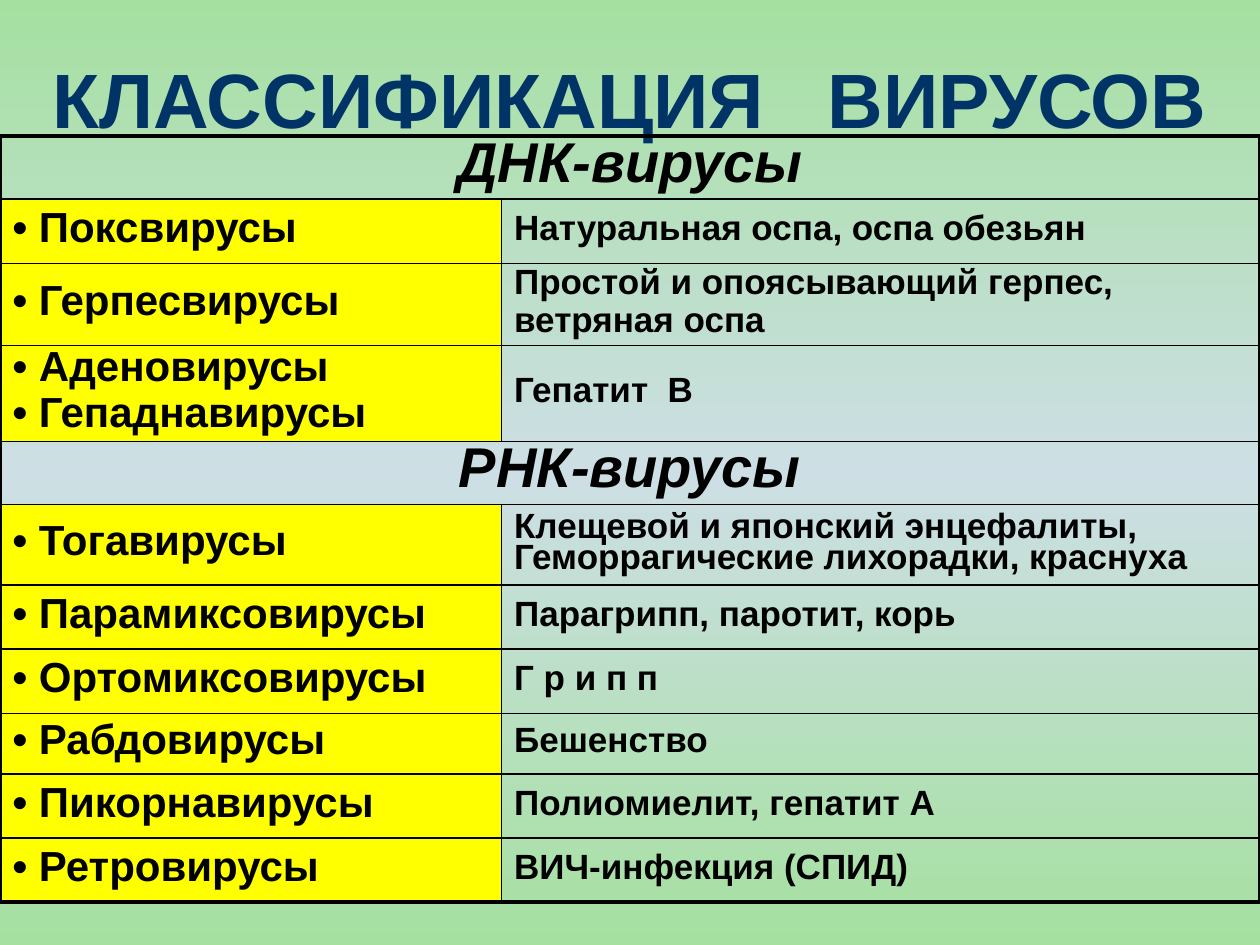
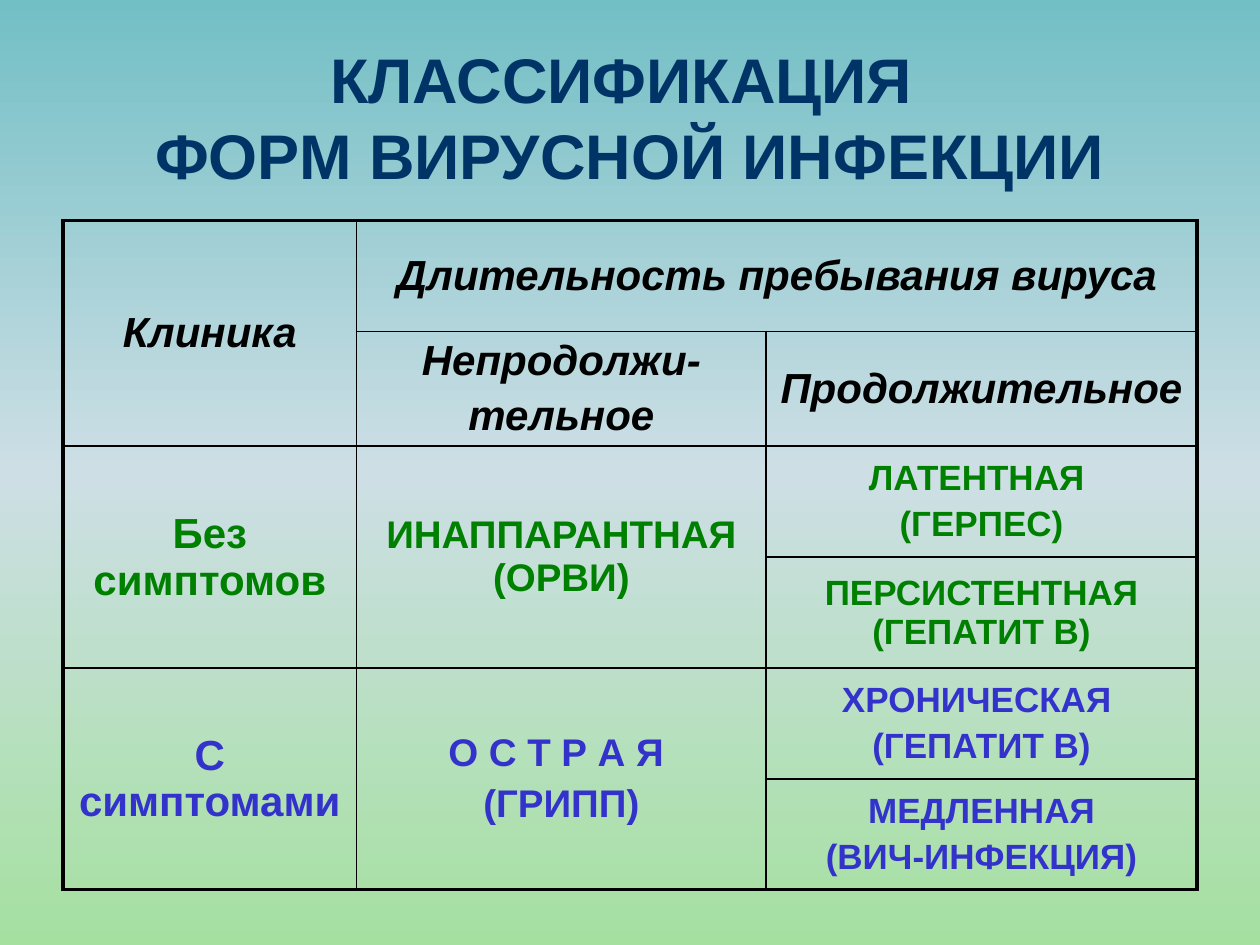
from copy import deepcopy
from dataclasses import dataclass

from lxml import etree
from pptx import Presentation
from pptx.dml.color import RGBColor
from pptx.enum.text import MSO_ANCHOR, MSO_AUTO_SIZE, PP_ALIGN
from pptx.oxml.ns import qn
from pptx.util import Pt

LEFT, CENTER = PP_ALIGN.LEFT, PP_ALIGN.CENTER
TOP, MIDDLE = MSO_ANCHOR.TOP, MSO_ANCHOR.MIDDLE
FIXED = MSO_AUTO_SIZE.NONE
TITLE_ONLY = 5


@dataclass(frozen=True)
class Theme:
    font: str = "Arial"
    navy: str = "003366"
    black: str = "000000"
    yellow: str = "FFFF00"
    green: str = "008000"
    blue: str = "3333CC"
    mint: str = "A5E0A0"
    mist: str = "CDDFE5"
    teal: str = "72BFC5"
    large: int = 44
    title: int = 36
    group: int = 32
    head: int = 24
    form: int = 22
    body: int = 20
    frame: float = 2.25
    rule: float = 1


def write(frame, text, size, color, font, align=LEFT, anchor=MIDDLE,
          bold=True, italic=False, line=None, before=None):
    """Fill a frame with one paragraph per item; before is a percentage."""
    frame.vertical_anchor = anchor
    for i, part in enumerate([text] if isinstance(text, str) else text):
        para = frame.add_paragraph() if i else frame.paragraphs[0]
        para.text = part
        para.alignment = align
        if line:
            para.line_spacing = line
        if before:
            para.space_before = Pt(0)
            space = para._p.pPr.find(qn("a:spcBef"))
            space.clear()
            etree.SubElement(space, qn("a:spcPct"), val=str(before * 1000))
        for run in para.runs:
            run.font.name, run.font.size = font, Pt(size)
            run.font.bold, run.font.italic = bold, italic
            run.font.color.rgb = RGBColor.from_string(color)


class Deck:
    def __init__(self, theme):
        self.theme = theme
        self.file = Presentation()
        self.file.slide_width, self.file.slide_height = Pt(720), Pt(540)
        self.slide = self.table = None

    def page(self, *colors):
        """Start a slide with a vertical gradient of evenly placed colours."""
        self.slide = self.file.slides.add_slide(
            self.file.slide_layouts[TITLE_ONLY])
        fill = self.slide.background.fill
        fill.gradient()
        fill.gradient_angle = 270
        stops = self.slide.element.find(".//" + qn("a:gsLst"))
        while len(stops) < len(colors):
            stops.append(deepcopy(stops[-1]))
        for i, (stop, color) in enumerate(zip(fill.gradient_stops, colors)):
            stop.position = i / (len(colors) - 1)
            stop.color.rgb = RGBColor.from_string(color)

    def title(self, text, box, size):
        shape = self.slide.shapes.title
        shape.left, shape.top, shape.width, shape.height = map(Pt, box)
        shape.text_frame.auto_size = FIXED
        write(shape.text_frame, text, size, self.theme.navy, self.theme.font,
              align=CENTER)

    def grid(self, box, widths, heights):
        shape = self.slide.shapes.add_table(
            len(heights), len(widths), *map(Pt, box))
        self.table = shape.table
        self.table.first_row = self.table.horz_banding = False
        for col, width in zip(self.table.columns, widths):
            col.width = Pt(width)
        for row, height in zip(self.table.rows, heights):
            row.height = Pt(height)
        shape.height = Pt(box[3])

    def edge(self, cell, side, width):
        line = etree.SubElement(cell._tc.get_or_add_tcPr(), qn("a:ln" + side),
                                w=str(Pt(width)))
        fill = etree.SubElement(line, qn("a:solidFill"))
        etree.SubElement(fill, qn("a:srgbClr"), val=self.theme.black)

    def cell(self, row, col, text, size, down=1, across=1, fill=None,
             color=None, **style):
        """Write a cell, merged over down rows and across columns."""
        last, end = row + down - 1, col + across - 1
        rows, cols = len(self.table.rows), len(self.table.columns)
        first = self.table.cell(row, col)
        if down * across > 1:
            first.merge(self.table.cell(last, end))
        outer = {"L": col == 0, "R": end == cols - 1,
                 "T": row == 0, "B": last == rows - 1}
        for r in range(row, last + 1):
            for c in range(col, end + 1):
                part = self.table.cell(r, c)
                meets = {"L": c == col, "R": c == end,
                         "T": r == row, "B": r == last}
                for side, rim in outer.items():
                    if meets[side] or (r, c) == (row, col):
                        self.edge(part, side,
                                  self.theme.frame if rim else self.theme.rule)
                if fill:
                    part.fill.solid()
                    part.fill.fore_color.rgb = RGBColor.from_string(fill)
                else:
                    part.fill.background()
        write(first.text_frame, text, size, color or self.theme.black,
              self.theme.font, before=20, **style)
        first.vertical_anchor = style.get("anchor", MIDDLE)


VIRUSES = [
    ("ДНК-вирусы", [
        (["Поксвирусы"], "Натуральная оспа, оспа обезьян"),
        (["Герпесвирусы"],
         ["Простой и опоясывающий герпес,", "ветряная оспа"]),
        (["Аденовирусы", "Гепаднавирусы"], "Гепатит  В"),
    ]),
    ("РНК-вирусы", [
        (["Тогавирусы"], "Клещевой и японский энцефалиты, "
                         "Геморрагические лихорадки, краснуха"),
        (["Парамиксовирусы"], "Парагрипп, паротит, корь"),
        (["Ортомиксовирусы"], "Г р и п п"),
        (["Рабдовирусы"], "Бешенство"),
        (["Пикорнавирусы"], "Полиомиелит, гепатит А"),
        (["Ретровирусы"], "ВИЧ-инфекция (СПИД)"),
    ]),
]


def viruses(deck):
    look = deck.theme
    deck.page(look.mint, look.mist, look.mint)
    deck.title("КЛАССИФИКАЦИЯ   ВИРУСОВ", (0, 21.6, 720, 68.4), look.large)
    deck.grid((0, 77.8, 720, 449.3), (286.6, 433.4),
              (30.2, 36.7, 45.4, 50.4, 35.3, 46.1, 36.7, 36.7, 34.6, 36.7,
               36.7))
    row = 0
    for group, kinds in VIRUSES:
        deck.cell(row, 0, group, look.group, across=2, align=CENTER,
                  anchor=MIDDLE if row else TOP, italic=True, line=0.8)
        for row, (names, ills) in enumerate(kinds, row + 1):
            deck.cell(row, 0, [f"• {name}" for name in names], look.head,
                      fill=look.yellow, line=0.8)
            deck.cell(row, 1, ills, look.body, line=0.8)
        row += 1


def forms(deck):
    look = deck.theme
    deck.page(look.teal, look.mist, look.mint)
    deck.title("КЛАССИФИКАЦИЯ \vФОРМ ВИРУСНОЙ ИНФЕКЦИИ",
               (36, 21.6, 648, 90), look.title)
    deck.grid((36, 126, 648, 385.9), (167.8, 234, 246.2), [63.4] * 6)
    heads = [
        (0, 0, "Клиника", 2, 1),
        (0, 1, "Длительность пребывания вируса", 1, 2),
        (1, 1, ["Непродолжи-", "тельное"], 1, 1),
        (1, 2, "Продолжительное", 1, 1),
    ]
    for row, col, text, down, across in heads:
        deck.cell(row, col, text, look.head, down, across, align=CENTER,
                  italic=True)
    groups = [
        (look.green, "Без симптомов", "ИНАППАРАНТНАЯ (ОРВИ)",
         ["ЛАТЕНТНАЯ ", "(ГЕРПЕС)"], "ПЕРСИСТЕНТНАЯ (ГЕПАТИТ В)"),
        (look.blue, "С симптомами", ["О С Т Р А Я ", "(ГРИПП)"],
         ["ХРОНИЧЕСКАЯ ", "(ГЕПАТИТ В)"], ["МЕДЛЕННАЯ", "(ВИЧ-ИНФЕКЦИЯ)"]),
    ]
    for i, (color, signs, brief, *long) in enumerate(groups):
        row = 2 + 2 * i
        style = {"color": color, "align": CENTER}
        deck.cell(row, 0, signs, look.head, down=2, **style)
        deck.cell(row, 1, brief, look.form, down=2, **style)
        for step, text in enumerate(long):
            deck.cell(row + step, 2, text, look.body, **style)


def main():
    deck = Deck(Theme())
    viruses(deck)
    forms(deck)
    deck.file.save("out.pptx")


if __name__ == "__main__":
    main()
